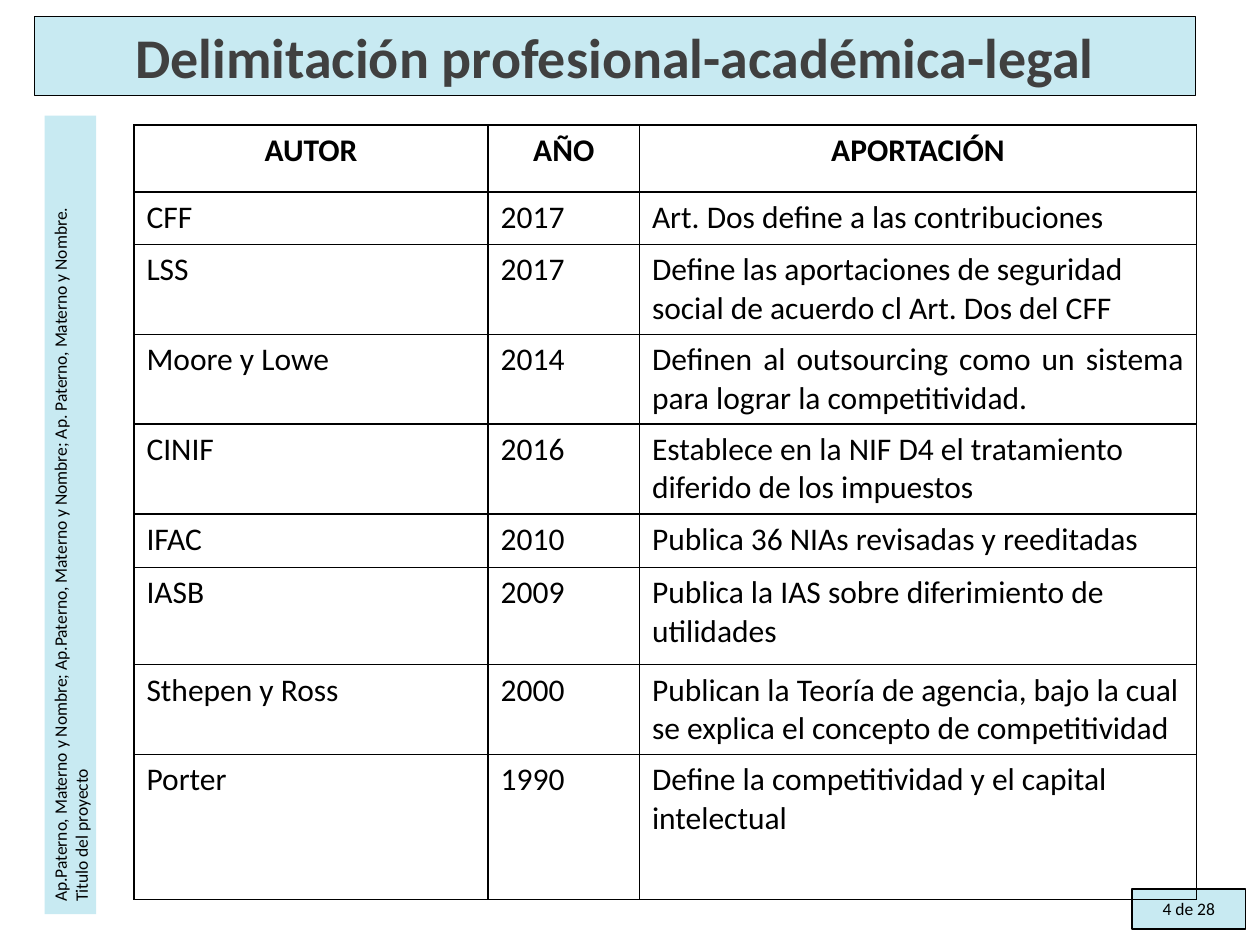
from lxml.etree import SubElement
from pptx import Presentation
from pptx.dml.color import RGBColor
from pptx.enum.shapes import MSO_SHAPE
from pptx.enum.text import MSO_ANCHOR, PP_ALIGN
from pptx.oxml.ns import qn
from pptx.util import Cm, Pt

COLORS = {"panel": "C8EAF2", "ink": "000000", "title": "404040"}
FONT = "Calibri"

TITLE = "Delimitación profesional-académica-legal"
PAGE = "4 de 28"
CREDITS = [
    "Ap.Paterno, Materno y Nombre; Ap.Paterno, Materno y Nombre; "
    "Ap. Paterno, Materno y Nombre.",
    "Titulo del proyecto",
]
HEADINGS = ("AUTOR", "AÑO", "APORTACIÓN")
AUTHORS = [
    ("CFF", "2017", "Art. Dos define a las contribuciones"),
    ("LSS", "2017", "Define las aportaciones de seguridad social de acuerdo cl Art. Dos del CFF"),
    ("Moore y Lowe", "2014", "Definen al outsourcing como un sistema para lograr la competitividad."),
    ("CINIF", "2016", "Establece en la NIF D4 el tratamiento diferido de los impuestos"),
    ("IFAC", "2010", "Publica 36 NIAs revisadas y reeditadas"),
    ("IASB", "2009", "Publica la IAS sobre diferimiento de utilidades"),
    ("Sthepen y Ross", "2000", "Publican la Teoría de agencia, bajo la cual se explica el concepto de competitividad"),
    ("Porter", "1990", "Define la competitividad y el capital intelectual"),
]
JUSTIFIED_AUTHOR = "Moore y Lowe"
COLUMN_WIDTHS = (7.14, 3.05, 11.23)
ROW_HEIGHTS = (1.35, 1.06, 1.81, 1.81, 1.81, 1.08, 1.96, 1.81, 2.92)
TABLE_LEFT, TABLE_TOP = 2.7, 2.52


def style(paragraph, size, align, color="ink", bold=False):
    paragraph.alignment = align
    paragraph.font.name = FONT
    paragraph.font.size = Pt(size)
    paragraph.font.bold = bold
    paragraph.font.color.rgb = RGBColor.from_string(COLORS[color])


def add_panel(slide, box, lines, size, align, outlined=True, **look):
    panel = slide.shapes.add_shape(MSO_SHAPE.RECTANGLE, *map(Cm, box))
    panel.shadow.inherit = False
    panel.fill.solid()
    panel.fill.fore_color.rgb = RGBColor.from_string(COLORS["panel"])
    if outlined:
        panel.line.color.rgb = RGBColor.from_string(COLORS["ink"])
        panel.line.width = Pt(0.75)
    else:
        panel.line.fill.background()
    frame = panel.text_frame
    frame.word_wrap = True
    frame.vertical_anchor = MSO_ANCHOR.MIDDLE
    frame.text = "\n".join(lines)
    for paragraph in frame.paragraphs:
        style(paragraph, size, align, **look)
    return panel


def add_borders(cell):
    properties = cell._tc.get_or_add_tcPr()
    for index, side in enumerate(("lnL", "lnR", "lnT", "lnB")):
        border = SubElement(properties, qn(f"a:{side}"), w=str(Pt(1)))
        fill = SubElement(border, qn("a:solidFill"))
        SubElement(fill, qn("a:srgbClr"), val=COLORS["ink"])
        properties.insert(index, border)


def add_authors(slide):
    rows = [HEADINGS, *AUTHORS]
    table = slide.shapes.add_table(
        len(rows), len(HEADINGS), Cm(TABLE_LEFT), Cm(TABLE_TOP),
        Cm(sum(COLUMN_WIDTHS)), Cm(sum(ROW_HEIGHTS)),
    ).table
    table.first_row = table.horz_banding = False
    for column, width in zip(table.columns, COLUMN_WIDTHS):
        column.width = Cm(width)
    for r, (row, height) in enumerate(zip(rows, ROW_HEIGHTS)):
        table.rows[r].height = Cm(height)
        for c, wording in enumerate(row):
            cell = table.cell(r, c)
            cell.text = wording
            cell.fill.background()
            add_borders(cell)
            if r == 0:
                align = PP_ALIGN.CENTER
            elif row[0] == JUSTIFIED_AUTHOR and c == 2:
                align = PP_ALIGN.JUSTIFY
            else:
                align = PP_ALIGN.LEFT
            style(cell.text_frame.paragraphs[0], 18, align, bold=r == 0)


def main():
    deck = Presentation()
    deck.slide_width, deck.slide_height = Cm(25.4), Cm(19.05)
    slide = deck.slides.add_slide(deck.slide_layouts[6])
    add_panel(slide, (22.82, 17.92, 2.29, 0.81), [PAGE], 10, PP_ALIGN.CENTER)
    add_panel(slide, (0.7, 0.33, 23.4, 1.6), [TITLE], 32, PP_ALIGN.CENTER,
              color="title", bold=True)
    sidebar = add_panel(slide, (-6.63, 9.86, 16.1, 1.04), CREDITS, 10,
                        PP_ALIGN.LEFT, outlined=False)
    sidebar.rotation = 270
    add_authors(slide)
    deck.save("out.pptx")


if __name__ == "__main__":
    main()
